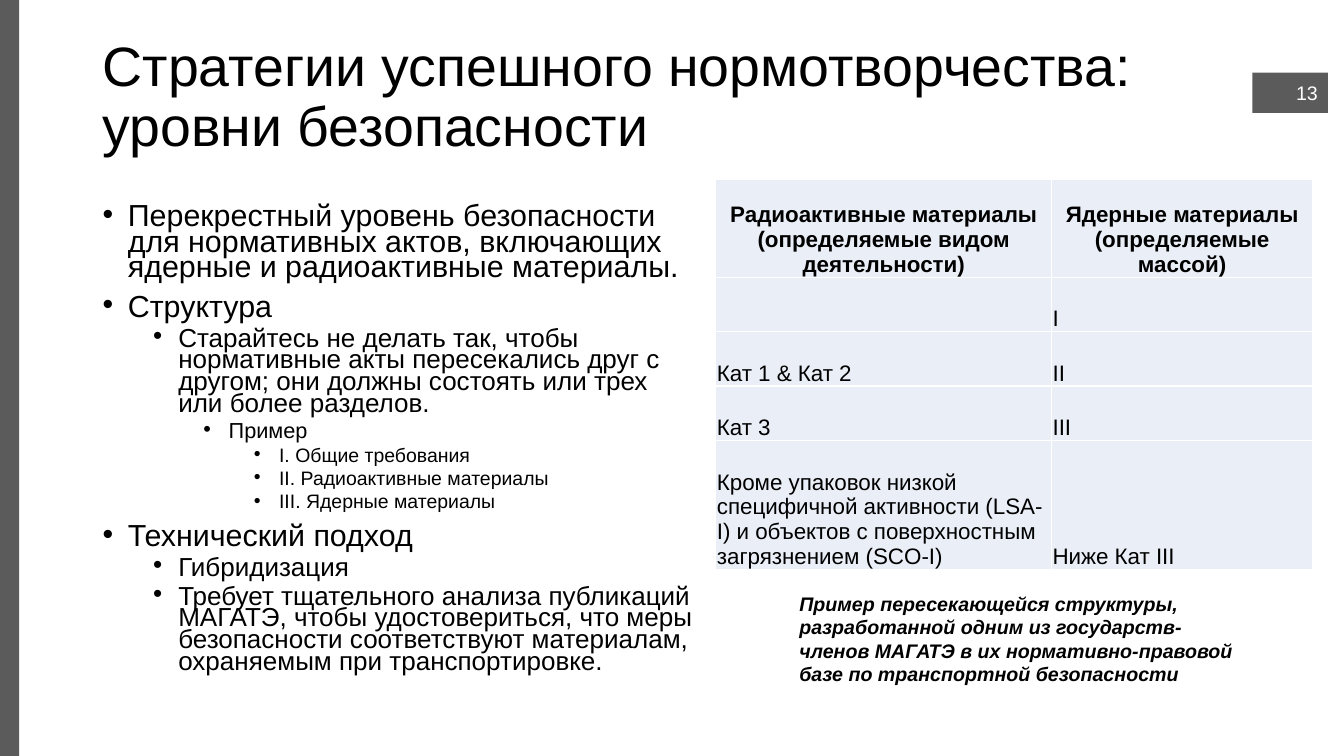
from lxml import etree
from pptx import Presentation
from pptx.dml.color import RGBColor
from pptx.enum.shapes import MSO_SHAPE
from pptx.enum.text import MSO_ANCHOR, PP_ALIGN
from pptx.oxml.ns import qn
from pptx.util import Inches, Pt

RECT = MSO_SHAPE.RECTANGLE
TOP, MIDDLE, BOTTOM = MSO_ANCHOR.TOP, MSO_ANCHOR.MIDDLE, MSO_ANCHOR.BOTTOM
LEFT, CENTER, RIGHT = PP_ALIGN.LEFT, PP_ALIGN.CENTER, PP_ALIGN.RIGHT

COLORS = {"text": "000000", "gray": "5B5B5B", "white": "FFFFFF", "cell": "EAEFF7"}
LEVEL_SIZES = [21.7, 18.6, 15.5, 13.9]

TITLE = "Стратегии успешного нормотворчества: уровни безопасности"
BULLETS = [
    (0, "Перекрестный уровень безопасности для нормативных актов, включающих ядерные и радиоактивные материалы."),
    (0, "Структура"),
    (1, "Старайтесь не делать так, чтобы нормативные акты пересекались друг с другом; они должны состоять или трех или более разделов."),
    (2, "Пример"),
    (3, "I. Общие требования"),
    (3, "II. Радиоактивные материалы"),
    (3, "III. Ядерные материалы"),
    (0, "Технический подход"),
    (1, "Гибридизация"),
    (1, "Требует тщательного анализа публикаций МАГАТЭ, чтобы удостовериться, что меры безопасности соответствуют материалам, охраняемым при транспортировке."),
]
COLUMN_WIDTHS = [3.33, 2.59]
ROW_HEIGHTS = [0.97, 0.54, 0.54, 0.54, 1.28]
CATEGORIES = [
    (["Радиоактивные материалы", "(определяемые видом деятельности)"],
     ["Ядерные материалы (определяемые массой)"]),
    ([], ["I"]),
    (["Кат 1 & Кат 2"], ["II"]),
    (["Кат 3"], ["III"]),
    (["Кроме упаковок низкой специфичной активности (LSA-I) и объектов с поверхностным загрязнением (SCO-I)"],
     ["Ниже Кат III"]),
]
CAPTION = ("Пример пересекающейся структуры, разработанной одним из государств-членов МАГАТЭ "
           "в их нормативно-правовой базе по транспортной безопасности")


class SlideBuilder:
    font = "Arial"

    def __init__(self, slide):
        self.slide = slide

    def color(self, name):
        return RGBColor.from_string(COLORS[name])

    def fill(self, target, name):
        target.fill.solid()
        target.fill.fore_color.rgb = self.color(name)

    def paragraph(self, tf, index, text, size, color="text", align=LEFT, bold=False, italic=False):
        p = tf.add_paragraph() if index else tf.paragraphs[0]
        p.alignment = align
        r = p.add_run()
        r.text = text
        style = {"name": self.font, "size": Pt(size), "bold": bold, "italic": italic}
        for key, value in style.items():
            setattr(r.font, key, value)
        r.font.color.rgb = self.color(color)
        return p

    def text_box(self, box, anchor=TOP):
        tf = self.slide.shapes.add_textbox(*map(Inches, box)).text_frame
        tf.word_wrap = True
        tf.vertical_anchor = anchor
        return tf

    def rectangle(self, box, color):
        s = self.slide.shapes.add_shape(RECT, *map(Inches, box))
        s.shadow.inherit = False
        self.fill(s, color)
        s.line.fill.background()
        return s

    def bullets(self, box, items):
        tf = self.text_box(box)
        for i, (level, text) in enumerate(items):
            p = self.paragraph(tf, i, text, LEVEL_SIZES[level])
            p.level = level
            p.line_spacing = 0.7
            p.space_before = Pt(0 if i == 0 else 5 if level else 10)
            pPr = p._p.get_or_add_pPr()
            pPr.set("marL", str(Inches(0.25 + 0.5 * level)))
            pPr.set("indent", str(Inches(-0.25)))
            etree.SubElement(pPr, qn("a:buFont"), typeface=self.font)
            etree.SubElement(pPr, qn("a:buChar"), char="•")

    def cell_borders(self, cell):
        tcPr = cell._tc.get_or_add_tcPr()
        for position, side in enumerate(("a:lnL", "a:lnR", "a:lnT", "a:lnB")):
            line = etree.Element(qn(side), w=str(Pt(1)))
            solid = etree.SubElement(line, qn("a:solidFill"))
            etree.SubElement(solid, qn("a:srgbClr"), val=COLORS["white"])
            tcPr.insert(position, line)

    def table(self, left, top, widths, heights, rows):
        box = (left, top, sum(widths), sum(heights))
        table = self.slide.shapes.add_table(len(heights), len(widths), *map(Inches, box)).table
        for column, width in zip(table.columns, widths):
            column.width = Inches(width)
        for row, height in zip(table.rows, heights):
            row.height = Inches(height)
        margins = {"margin_left": 0.01, "margin_right": 0.01, "margin_top": 0.01, "margin_bottom": 0}
        for i, row in enumerate(rows):
            for j, texts in enumerate(row):
                cell = table.cell(i, j)
                for key, value in margins.items():
                    setattr(cell, key, Inches(value))
                cell.vertical_anchor = BOTTOM
                self.fill(cell, "cell")
                self.cell_borders(cell)
                for n, text in enumerate(texts):
                    self.paragraph(cell.text_frame, n, text, 16, align=LEFT if i else CENTER, bold=i == 0)


def main():
    prs = Presentation()
    prs.slide_width, prs.slide_height = Inches(13.33), Inches(7.5)
    builder = SlideBuilder(prs.slides.add_slide(prs.slide_layouts[6]))

    for i in range(3):
        builder.rectangle((0, 2.5 * i, 0.19, 2.5), "gray")
    title = builder.text_box((0.92, 0.12, 10.7, 1.5), BOTTOM)
    builder.paragraph(title, 0, TITLE, 39.6).line_spacing = 0.9
    builder.bullets((0.92, 2, 6.06, 5.26), BULLETS)
    builder.table(7.1, 1.78, COLUMN_WIDTHS, ROW_HEIGHTS, CATEGORIES)
    caption = builder.text_box((7.83, 5.82, 4.67, 1.04))
    builder.paragraph(caption, 0, CAPTION, 14, bold=True, italic=True)
    page = builder.rectangle((12.42, 0.72, 0.75, 0.4), "gray").text_frame
    page.vertical_anchor = MIDDLE
    builder.paragraph(page, 0, "13", 14, "white", RIGHT)

    prs.save("out.pptx")


if __name__ == "__main__":
    main()
